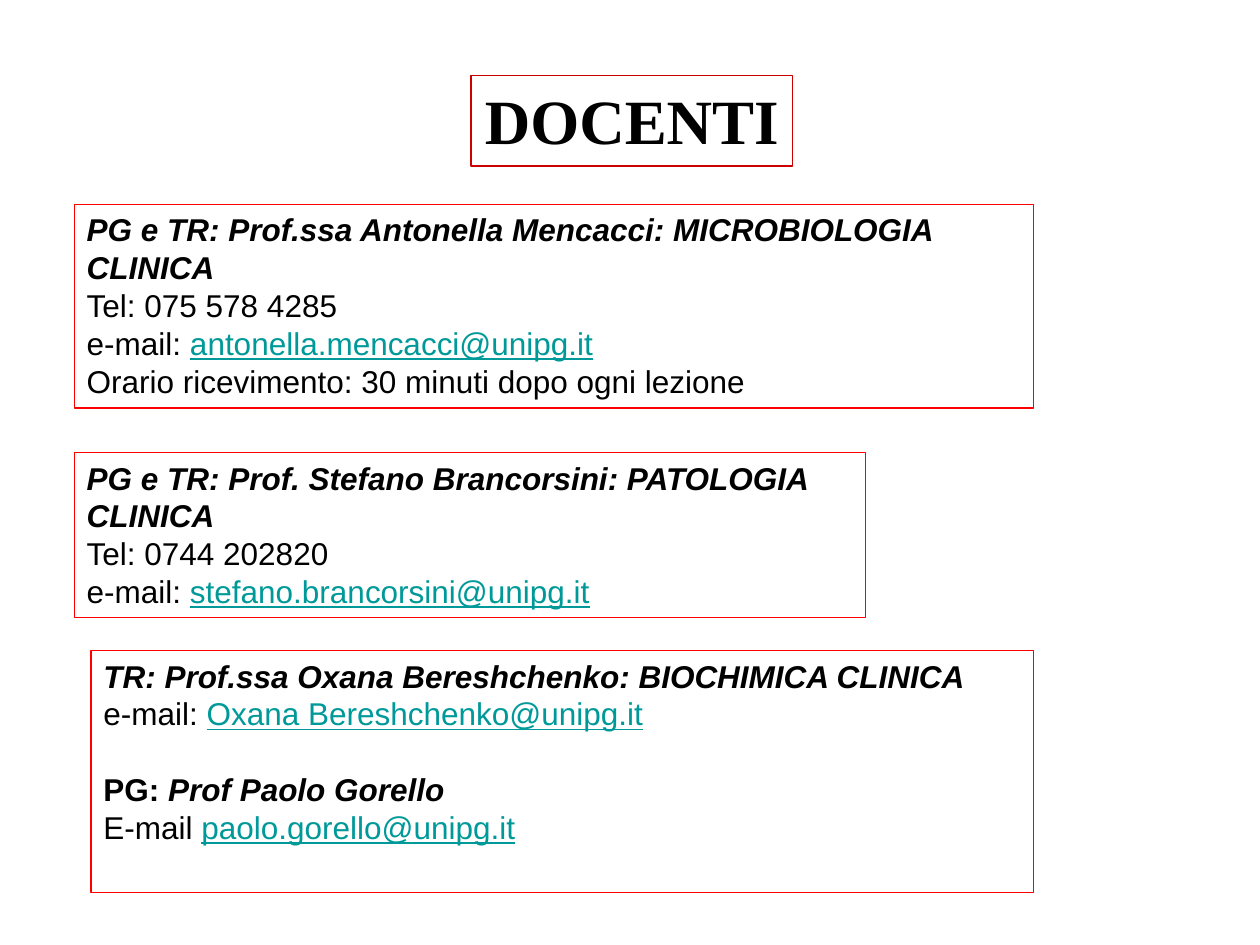
from pptx import Presentation
from pptx.dml.color import RGBColor
from pptx.enum.shapes import MSO_SHAPE
from pptx.enum.text import MSO_ANCHOR, MSO_AUTO_SIZE, PP_ALIGN
from pptx.util import Pt

# Content: each line is a list of (text, style) runs
TITLE = "DOCENTI"
HEADING = {"bold": True, "italic": True}
LINK = {"color": "009999", "underline": True}
PLAIN = {}

MENCACCI = [
    [("PG e TR: Prof.ssa Antonella Mencacci: MICROBIOLOGIA CLINICA", HEADING)],
    [("Tel: 075 578 4285", PLAIN)],
    [("e-mail: ", PLAIN), ("antonella.mencacci@unipg.it", LINK)],
    [("Orario ricevimento: 30 minuti dopo ogni lezione", PLAIN)],
]
BRANCORSINI = [
    [("PG e TR: Prof. Stefano Brancorsini: PATOLOGIA CLINICA", HEADING)],
    [("Tel: 0744 202820", PLAIN)],
    [("e-mail: ", PLAIN), ("stefano.brancorsini@unipg.it", LINK)],
]
BERESHCHENKO = [
    [("TR: Prof.ssa Oxana Bereshchenko: BIOCHIMICA CLINICA", HEADING)],
    [("e-mail: ", PLAIN), ("Oxana Bereshchenko@unipg.it", LINK)],
]
GORELLO = [
    [("PG: ", {"bold": True}), ("Prof Paolo Gorello", HEADING)],
    [("E-mail ", PLAIN), ("paolo.gorello@unipg.it", LINK)],
]

# Cards: left, top, width, height in points, and the teachers in each
CARDS = [
    (42.5, 116.7, 548, 116.5, [MENCACCI]),
    (42.5, 258.5, 452, 94.5, [BRANCORSINI]),
    (52, 371.7, 538.5, 138.3, [BERESHCHENKO, GORELLO]),
]
TEACHER_GAP = 21.5


def rgb(color):
    return RGBColor.from_string(color)


def add_run(paragraph, text, size=18, font="Arial", color="000000",
            bold=False, italic=False, underline=False):
    run = paragraph.add_run()
    run.text = text
    run.font.size = Pt(size)
    run.font.name = font
    run.font.color.rgb = rgb(color)
    run.font.bold = bold
    run.font.italic = italic
    run.font.underline = underline


def format_box(shape, line_color, line_width, wrap):
    shape.fill.background()
    shape.line.color.rgb = rgb(line_color)
    shape.line.width = Pt(line_width)
    frame = shape.text_frame
    frame.auto_size = MSO_AUTO_SIZE.NONE
    frame.word_wrap = wrap
    frame.vertical_anchor = MSO_ANCHOR.TOP
    return frame


def add_card(slide, left, top, width, height, teachers):
    shape = slide.shapes.add_shape(
        MSO_SHAPE.RECTANGLE, Pt(left), Pt(top), Pt(width), Pt(height))
    shape.shadow.inherit = False
    frame = format_box(shape, "FF0000", 0.75, True)
    paragraph = None
    for teacher in teachers:
        for index, line in enumerate(teacher):
            is_first = paragraph is None
            paragraph = frame.paragraphs[0] if is_first else frame.add_paragraph()
            paragraph.alignment = PP_ALIGN.LEFT
            if index == 0 and not is_first:
                paragraph.space_before = Pt(TEACHER_GAP)
            for text, style in line:
                add_run(paragraph, text, **style)


def main():
    presentation = Presentation()
    presentation.slide_width, presentation.slide_height = Pt(720), Pt(540)
    slide = presentation.slides.add_slide(presentation.slide_layouts[5])

    # Title
    title = slide.shapes.title
    title.left, title.top, title.width, title.height = (
        Pt(269.3), Pt(43.2), Pt(183.6), Pt(51.8))
    frame = format_box(title, "CC0000", 1, False)
    frame.paragraphs[0].alignment = PP_ALIGN.CENTER
    add_run(frame.paragraphs[0], TITLE, size=36, font="Times New Roman", bold=True)

    # Teacher cards
    for card in CARDS:
        add_card(slide, *card)

    presentation.save("out.pptx")


if __name__ == "__main__":
    main()
